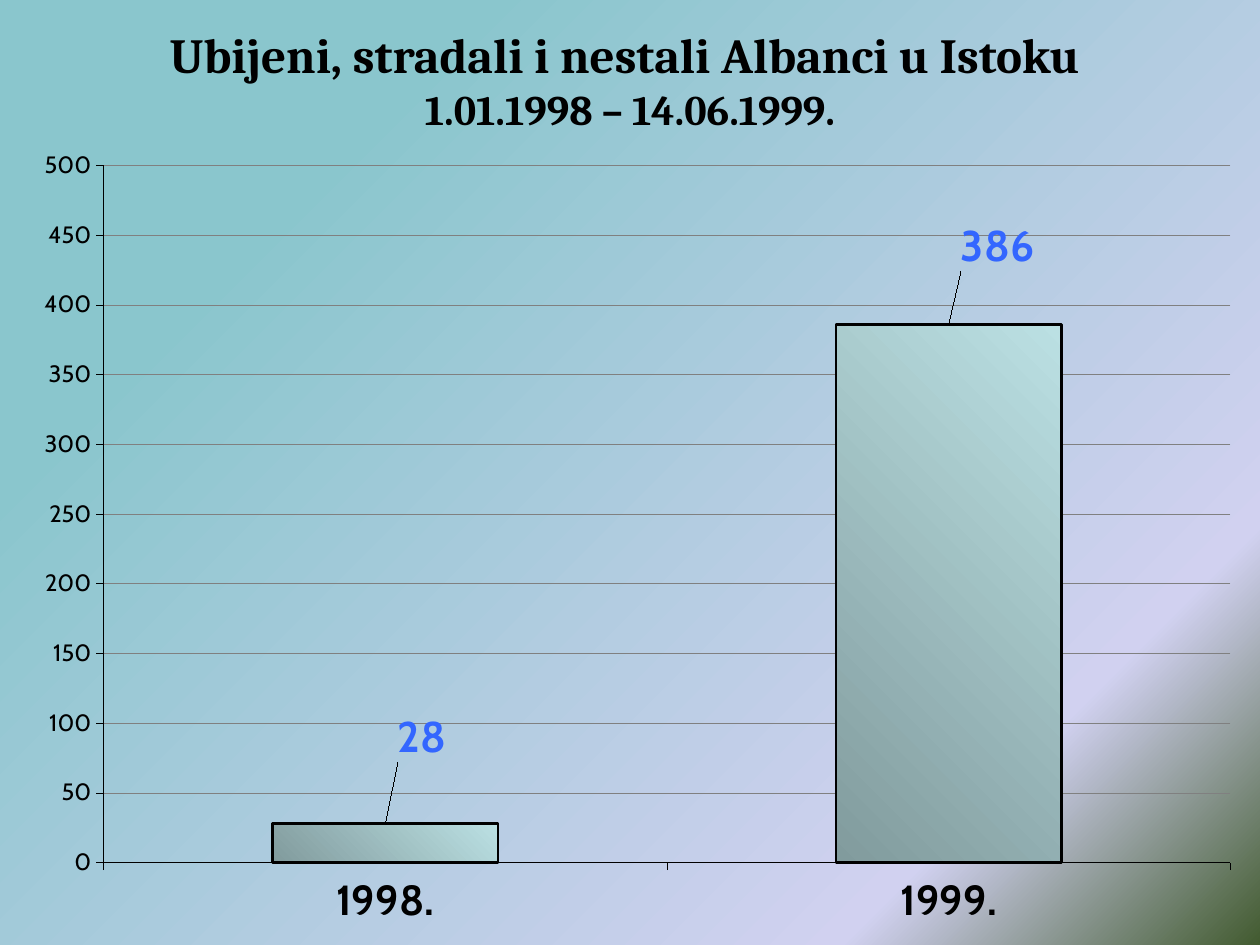
from dataclasses import dataclass

from lxml import etree
from pptx import Presentation
from pptx.chart.data import CategoryChartData
from pptx.dml.color import RGBColor
from pptx.enum.chart import XL_CHART_TYPE, XL_LABEL_POSITION, XL_TICK_MARK
from pptx.enum.text import MSO_ANCHOR, MSO_AUTO_SIZE, PP_ALIGN
from pptx.oxml.ns import qn
from pptx.slide import Slide
from pptx.util import Cm, Pt

COLUMN = XL_CHART_TYPE.COLUMN_CLUSTERED
OUTSIDE_END = XL_LABEL_POSITION.OUTSIDE_END
TICK_OUTSIDE = XL_TICK_MARK.OUTSIDE
MIDDLE = MSO_ANCHOR.MIDDLE
NO_AUTOFIT = MSO_AUTO_SIZE.NONE
CENTER = PP_ALIGN.CENTER

COLORS = {
    "text": "000000",
    "teal": "8AC6CD",
    "lavender": "D1D1F0",
    "green": "425B30",
    "bar_dark": "819B9D",
    "bar_light": "BBE0E3",
    "grid": "808080",
    "label": "3366FF",
}


@dataclass
class SlideBuilder:
    """Holds the style and the current slide and adds each kind of element."""

    slide: Slide
    title_font: str = "Cambria"
    chart_font: str = "Cabin"

    def color(self, name):
        return RGBColor.from_string(COLORS[name])

    def style_font(self, font, name, size, color="text", bold=False):
        font.name = name
        font.size = Pt(size)
        font.bold = bold
        font.color.rgb = self.color(color)

    def style_line(self, line, width, color="text"):
        line.color.rgb = self.color(color)
        line.width = Pt(width)

    def gradient(self, fill, root, angle, stops):
        fill.gradient()
        fill.gradient_angle = angle
        stop_list = root.find(".//" + qn("a:gsLst"))
        for stop in list(stop_list):
            stop_list.remove(stop)
        for position, name in stops:
            stop = etree.SubElement(stop_list, qn("a:gs"), pos=str(position * 1000))
            etree.SubElement(stop, qn("a:srgbClr"), val=COLORS[name])

    def background(self, angle, stops):
        self.gradient(self.slide.background.fill, self.slide.element, angle, stops)

    def title(self, lines, sizes, left, top, width, height):
        shape = self.slide.shapes.title
        shape.left, shape.top, shape.width, shape.height = left, top, width, height
        text_frame = shape.text_frame
        text_frame.text = "\v".join(lines)
        text_frame.auto_size = NO_AUTOFIT
        text_frame.vertical_anchor = MIDDLE
        paragraph = text_frame.paragraphs[0]
        paragraph.alignment = CENTER
        for run, size in zip(paragraph.runs, sizes):
            self.style_font(run.font, self.title_font, size, bold=True)

    def manual_layout(self, parent, index, **settings):
        for old in parent.findall(qn("c:layout")):
            parent.remove(old)
        layout = etree.Element(qn("c:layout"))
        manual = etree.SubElement(layout, qn("c:manualLayout"))
        for name, value in settings.items():
            etree.SubElement(manual, qn("c:" + name), val=str(value))
        parent.insert(index, layout)

    def style_axis(self, axis, size, bold=False):
        axis.major_tick_mark = TICK_OUTSIDE
        self.style_font(axis.tick_labels.font, self.chart_font, size, bold=bold)
        self.style_line(axis.format.line, 0.37)

    def column_chart(self, categories, values, label_offsets, left, top, width, height):
        chart_data = CategoryChartData()
        chart_data.categories = categories
        chart_data.add_series("Series 1", values)
        chart = self.slide.shapes.add_chart(
            COLUMN, left, top, width, height, chart_data).chart
        chart.has_legend = False
        chart.has_title = False
        self.style_font(chart.font, self.chart_font, 24.5, bold=True)
        self.manual_layout(
            chart.element.find(".//" + qn("c:plotArea")), 0,
            layoutTarget="inner", xMode="edge", yMode="edge",
            x=0.067, y=0.023, w=0.917, h=0.874)

        self.style_axis(chart.category_axis, 24, bold=True)
        value_axis = chart.value_axis
        self.style_axis(value_axis, 13.5)
        value_axis.minimum_scale = 0
        value_axis.maximum_scale = 500
        value_axis.major_unit = 50
        self.style_line(value_axis.major_gridlines.format.line, 0.37, "grid")

        plot = chart.plots[0]
        plot.gap_width = 150
        plot.vary_by_categories = False
        series = plot.series[0]
        self.gradient(series.format.fill, chart.element, 45,
                      [(0, "bar_dark"), (100, "bar_light")])
        self.style_line(series.format.line, 1.46)

        for index in range(len(values)):
            label = series.points[index].data_label
            self.style_font(label.font, self.chart_font, 24.5, "label", bold=True)
            label.position = OUTSIDE_END
        labels = chart.element.findall(".//" + qn("c:dLbl"))
        for label, (x, y) in zip(labels, label_offsets):
            self.manual_layout(label, 1, x=x, y=y)


def main():
    presentation = Presentation()
    presentation.slide_width = Cm(25.4)
    presentation.slide_height = Cm(19.05)
    slide = presentation.slides.add_slide(presentation.slide_layouts[5])
    builder = SlideBuilder(slide)
    builder.background(315, [(22, "teal"), (81, "lavender"), (100, "green")])
    builder.title(
        ["Ubijeni, stradali i nestali Albanci u Istoku ", "1.01.1998 – 14.06.1999."],
        [28, 24], Cm(1.27), Cm(0), Cm(22.86), Cm(3.18))
    builder.column_chart(
        ["1998.", "1999."], [28, 386], [(0.03, -0.07), (0.04, -0.06)],
        Cm(0.43), Cm(2.97), Cm(24.77), Cm(16.08))
    presentation.save("out.pptx")


if __name__ == "__main__":
    main()
